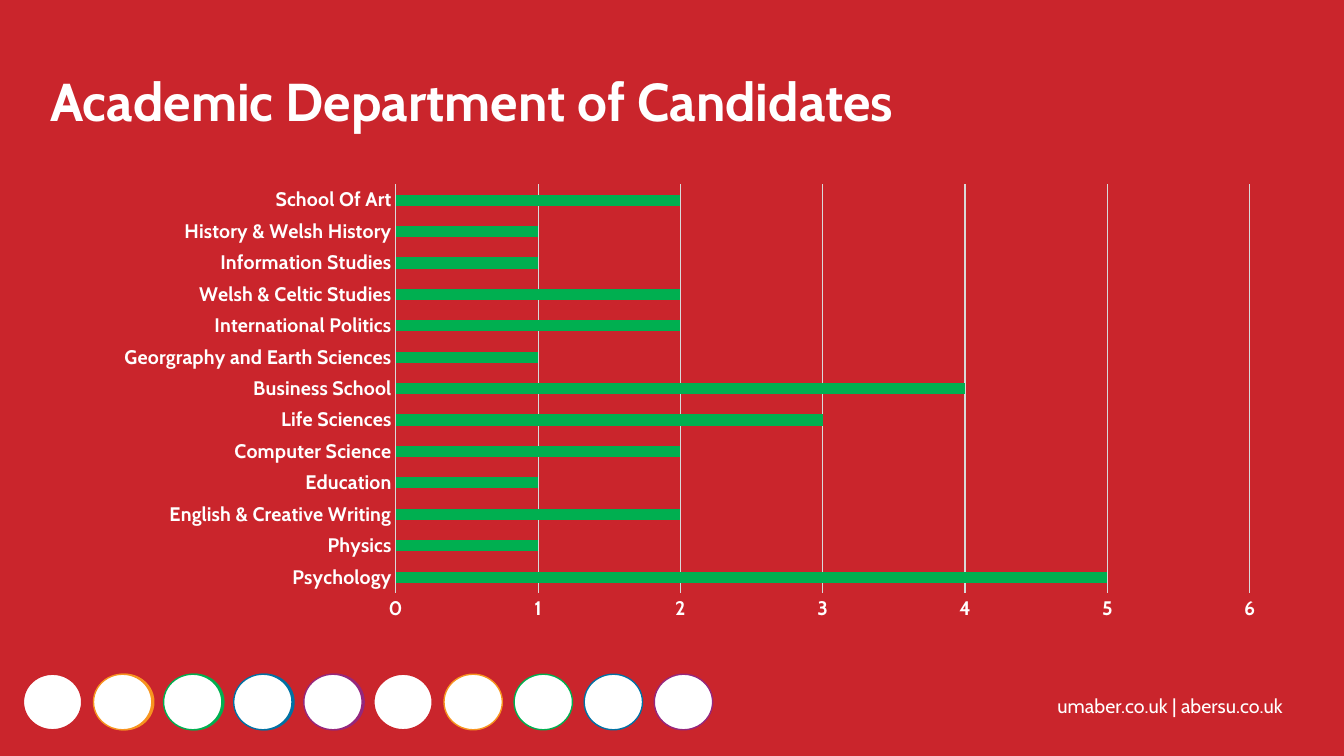
from dataclasses import dataclass

from lxml.etree import SubElement
from pptx import Presentation
from pptx.chart.data import CategoryChartData
from pptx.dml.color import RGBColor
from pptx.enum.chart import XL_CHART_TYPE, XL_TICK_MARK
from pptx.enum.shapes import MSO_SHAPE
from pptx.enum.text import MSO_ANCHOR
from pptx.util import Cm, Pt


@dataclass(frozen=True)
class Theme:
    font: str = "Cabin"
    red: RGBColor = RGBColor(0xCA, 0x25, 0x2C)
    white: RGBColor = RGBColor(0xFF, 0xFF, 0xFF)
    orange: RGBColor = RGBColor(0xF7, 0x94, 0x1F)
    green: RGBColor = RGBColor(0x00, 0xAF, 0x50)
    blue: RGBColor = RGBColor(0x01, 0x71, 0xA3)
    purple: RGBColor = RGBColor(0x95, 0x27, 0x7D)
    grid: RGBColor = RGBColor(0xD9, 0xD9, 0xD9)
    title_size: Pt = Pt(38)
    body_size: Pt = Pt(14)
    hairline: Pt = Pt(0.75)
    ring: Pt = Pt(1)


THEME = Theme()
RING_COLORS = [THEME.red, THEME.orange, THEME.green, THEME.blue, THEME.purple]
CANDIDATES = {
    "Psychology": 5,
    "Physics": 1,
    "English & Creative Writing": 2,
    "Education": 1,
    "Computer Science": 2,
    "Life Sciences": 3,
    "Business School": 4,
    "Georgraphy and Earth Sciences": 1,
    "International Politics": 2,
    "Welsh & Celtic Studies": 2,
    "Information Studies": 1,
    "History & Welsh History": 1,
    "School Of Art": 2,
}


def style_font(font, size, bold):
    font.name = THEME.font
    font.size = size
    font.bold = bold
    font.color.rgb = THEME.white


def add_text(s, box, text, size, bold=False, line_spacing=1.0):
    tf = s.shapes.add_textbox(*box).text_frame
    tf.word_wrap = True
    tf.vertical_anchor = MSO_ANCHOR.TOP
    tf.text = text
    p = tf.paragraphs[0]
    p.line_spacing = line_spacing
    style_font(p.runs[0].font, size, bold)


def add_circle(s, box, fill, line):
    sp = s.shapes.add_shape(MSO_SHAPE.OVAL, *box)
    sp.shadow.inherit = False
    sp.fill.solid()
    sp.fill.fore_color.rgb = fill
    sp.line.color.rgb = line
    sp.line.width = THEME.ring


def add_circle_row(s, box):
    left, top, width, height = box
    diameter = Cm(1.47)
    count = 2 * len(RING_COLORS)
    pitch = (width - diameter) // (count - 1)
    for i, color in enumerate(RING_COLORS):
        add_circle(s, (left + Cm(0.05) + i * pitch, top, diameter, height), color, color)
    for i in range(count):
        color = RING_COLORS[i % len(RING_COLORS)]
        add_circle(s, (left + i * pitch, top, diameter, height), THEME.white, color)


def add_department_chart(s, box):
    data = CategoryChartData()
    data.categories = list(CANDIDATES)
    data.add_series("Series 1", list(CANDIDATES.values()))
    chart = s.shapes.add_chart(XL_CHART_TYPE.BAR_CLUSTERED, *box, data).chart
    chart.has_legend = False
    chart.has_title = False
    style_font(chart.font, THEME.body_size, True)

    plot = chart.plots[0]
    plot.gap_width = 182
    plot.vary_by_categories = False
    fill = plot.series[0].format.fill
    fill.solid()
    fill.fore_color.rgb = THEME.green

    for axis in (chart.category_axis, chart.value_axis):
        axis.major_tick_mark = XL_TICK_MARK.NONE
        axis.minor_tick_mark = XL_TICK_MARK.NONE
        style_font(axis.tick_labels.font, THEME.body_size, True)

    value_axis = chart.value_axis
    value_axis.minimum_scale = 0
    value_axis.maximum_scale = 6
    value_axis.major_unit = 1
    value_axis.has_major_gridlines = True
    value_axis.format.line.fill.background()
    for line in (chart.category_axis.format.line, value_axis.major_gridlines.format.line):
        line.color.rgb = THEME.grid
        line.width = THEME.hairline


def add_footer(s, box):
    left, top, width, height = box
    add_circle_row(s, (left, top, Cm(17.37), height))
    address_left = Cm(26.4)
    address_box = (address_left, top + Cm(0.38), left + width - address_left, Cm(0.86))
    add_text(s, address_box, "umaber.co.uk | abersu.co.uk", THEME.body_size)


def build_chart_slide(prs):
    s = prs.slides.add_slide(prs.slide_layouts[6])
    s.background.fill.solid()
    s.background.fill.fore_color.rgb = THEME.red
    add_footer(s, (Cm(0.59), Cm(16.99), Cm(32.92), Cm(1.4)))
    title_box = (Cm(1.02), Cm(1.78), Cm(29), Cm(2.24))
    add_text(s, title_box, "Academic Department of Candidates", THEME.title_size, True, 0.9)
    add_department_chart(s, (Cm(2.54), Cm(4.42), Cm(29.69), Cm(11.46)))


def main():
    prs = Presentation()
    prs.slide_width = Cm(33.87)
    prs.slide_height = Cm(19.05)
    build_chart_slide(prs)
    prs.save("out.pptx")


if __name__ == "__main__":
    main()
